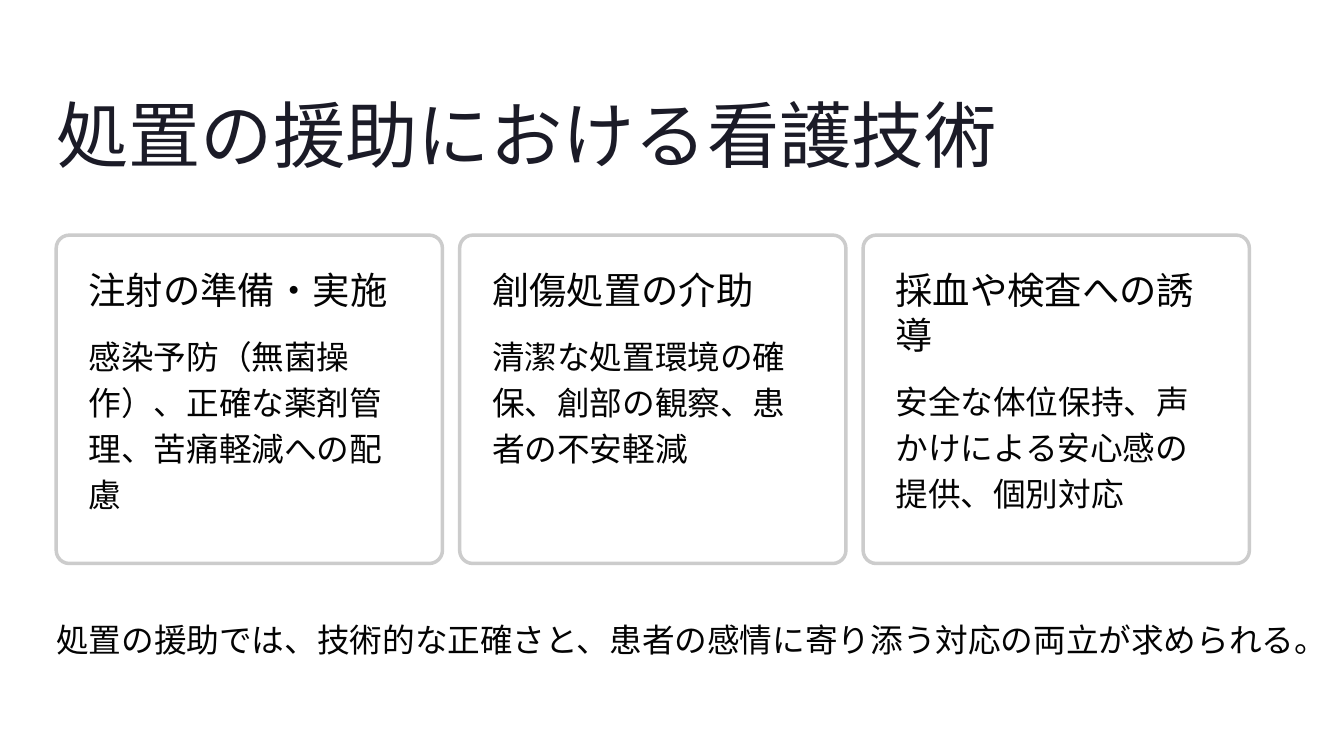
"""Build a slide on nursing skills for assisting with procedures."""
import pptx
import pptx.dml.color
import pptx.enum.shapes
import pptx.enum.text
import pptx.oxml.ns
import pptx.util
from lxml import etree

Cm = pptx.util.Cm
Pt = pptx.util.Pt
RGBColor = pptx.dml.color.RGBColor

TITLE_COLOR = RGBColor(0x1B, 0x1B, 0x27)
TEXT_COLOR = RGBColor(0x03, 0x03, 0x03)
CARD_FILL = RGBColor(0xFF, 0xFF, 0xFF)
CARD_BORDER = RGBColor(0xCC, 0xCC, 0xCC)
HEADING_FONT = "Inter"
BODY_FONT = "Lato"

MARGIN = Cm(1.7)
CARD_TOP = Cm(7.11)
CARD_WIDTH = Cm(11.68)
CARD_HEIGHT = Cm(9.93)
CARD_PITCH = Cm(12.2)
CARD_PADDING = Cm(0.98)
HEADING_LINE = Pt(38.5)
HEADING_GAP = Cm(0.52)
BODY_LINE = Pt(39.5)

CARDS = [
    ("注射の準備・実施", 1, "感染予防（無菌操作）、正確な薬剤管理、苦痛軽減への配慮"),
    ("創傷処置の介助", 1, "清潔な処置環境の確保、創部の観察、患者の不安軽減"),
    ("採血や検査への誘導", 2, "安全な体位保持、声かけによる安心感の提供、個別対応"),
]


def add_text(slide, box, text, size, line_spacing, font_name, color=TEXT_COLOR, wrap=True):
    """Place one paragraph without insets in the box (left, top, width, height)."""
    text_frame = slide.shapes.add_textbox(*box).text_frame
    text_frame.margin_left = text_frame.margin_right = 0
    text_frame.margin_top = text_frame.margin_bottom = 0
    text_frame.auto_size = pptx.enum.text.MSO_AUTO_SIZE.NONE
    text_frame.word_wrap = wrap
    text_frame.text = text
    paragraph = text_frame.paragraphs[0]
    paragraph.line_spacing = line_spacing
    font = paragraph.runs[0].font
    font.name = font_name
    font.size = Pt(size)
    font.color.rgb = color


def add_card(slide, box, heading, heading_lines, body):
    """Draw a rounded card in the box with a heading above its body text."""
    left, top, width, height = box
    card = slide.shapes.add_shape(pptx.enum.shapes.MSO_SHAPE.ROUNDED_RECTANGLE, *box)
    card.adjustments[0] = 0.04
    card.shadow.inherit = False
    card.fill.solid()
    card.fill.fore_color.rgb = CARD_FILL
    fill_color = card.fill._xPr.find(".//" + pptx.oxml.ns.qn("a:srgbClr"))
    etree.SubElement(fill_color, pptx.oxml.ns.qn("a:alpha"), val="95000")
    card.line.color.rgb = CARD_BORDER
    card.line.width = Pt(3)

    text_left = left + CARD_PADDING
    text_width = width - 2 * CARD_PADDING
    heading_top = top + CARD_PADDING
    heading_height = heading_lines * HEADING_LINE
    body_top = heading_top + heading_height + HEADING_GAP
    body_height = top + height - CARD_PADDING - body_top
    add_text(slide, (text_left, heading_top, text_width, heading_height),
             heading, 32, HEADING_LINE, HEADING_FONT)
    add_text(slide, (text_left, body_top, text_width, body_height),
             body, 28, BODY_LINE, BODY_FONT)


def add_cards(slide, left, top):
    """Lay the cards out in a row at an equal pitch."""
    for index, (heading, heading_lines, body) in enumerate(CARDS):
        box = (left + index * CARD_PITCH, top, CARD_WIDTH, CARD_HEIGHT)
        add_card(slide, box, heading, heading_lines, body)


def main():
    """Build the slide and save the presentation."""
    presentation = pptx.Presentation()
    presentation.slide_width = Cm(40.64)
    presentation.slide_height = Cm(22.86)
    slide = presentation.slides.add_slide(presentation.slide_layouts[6])
    add_text(slide, (MARGIN, Cm(2.62), Cm(28.5), Cm(2.74)),
             "処置の援助における看護技術", 62, Pt(77.5), HEADING_FONT, TITLE_COLOR, wrap=False)
    add_cards(slide, MARGIN, CARD_TOP)
    add_text(slide, (MARGIN, Cm(18.54), Cm(36.83), Cm(1.47)),
             "処置の援助では、技術的な正確さと、患者の感情に寄り添う対応の両立が求められる。",
             28, BODY_LINE, BODY_FONT, wrap=False)
    presentation.save("out.pptx")


if __name__ == "__main__":
    main()
